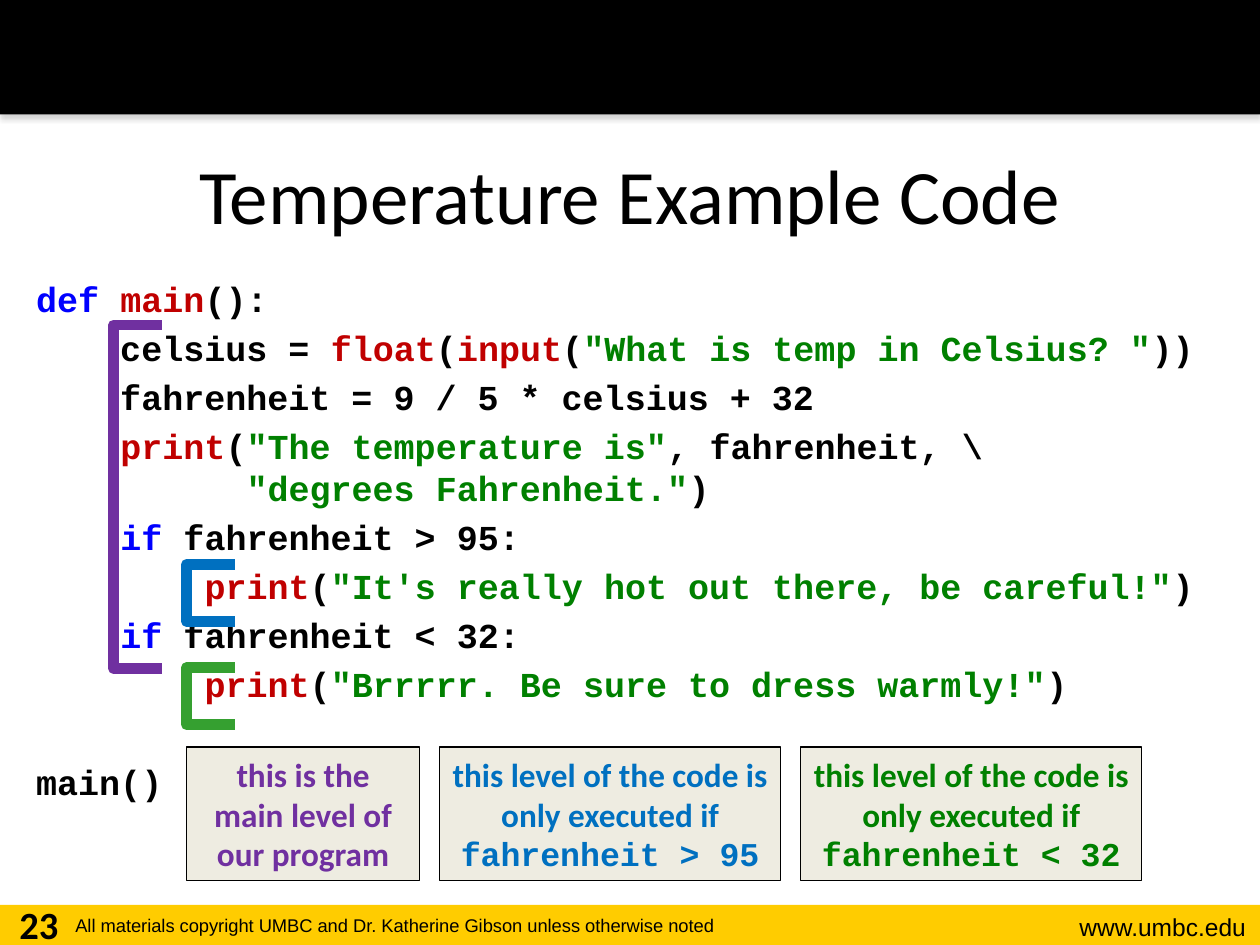
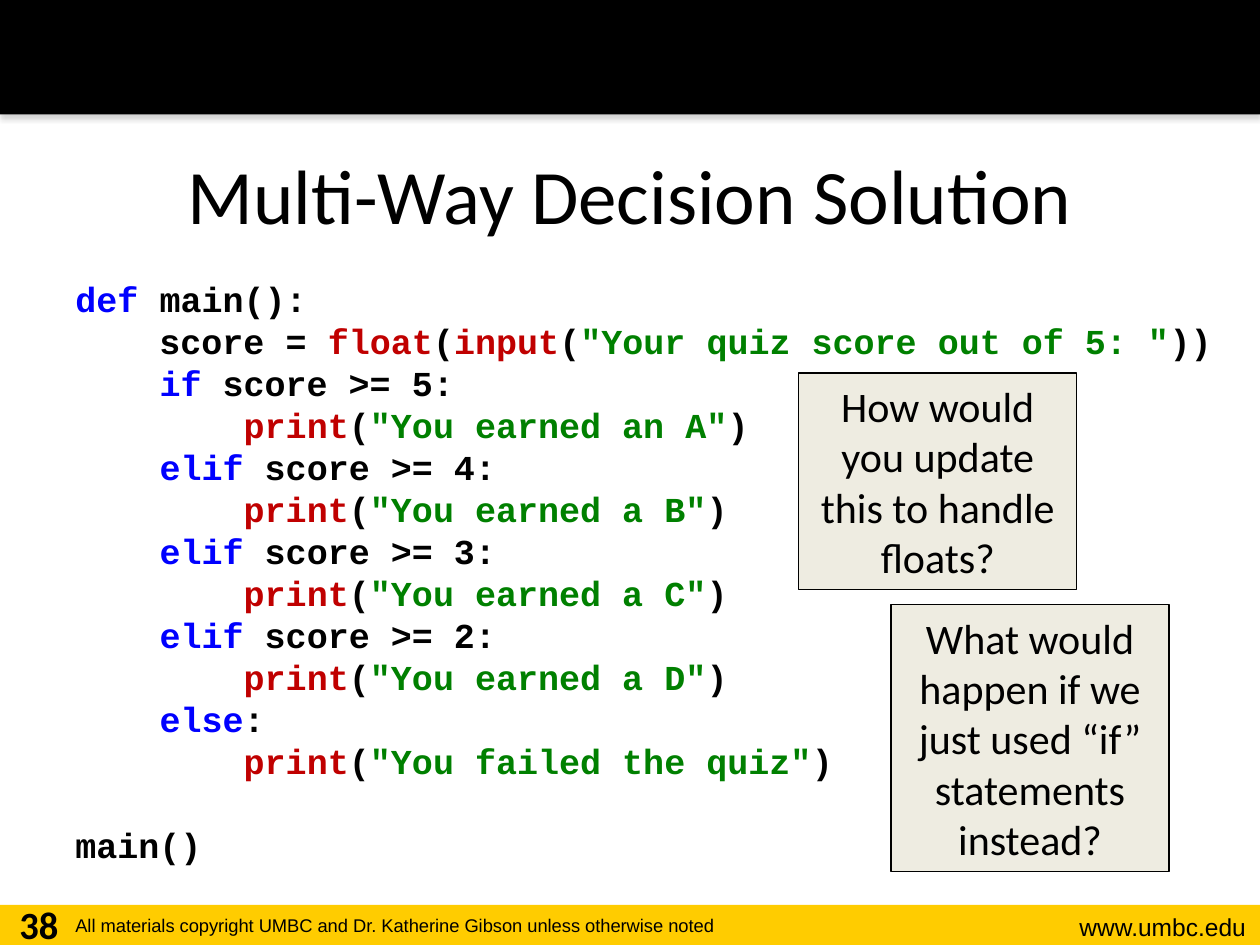
from lxml import etree
from pptx import Presentation
from pptx import util as u
from pptx.dml.color import RGBColor
from pptx.enum import shapes, text
from pptx.oxml import ns

Cm, Pt = u.Cm, u.Pt
COLORS = {
    "black": "000000", "gold": "FFCC00", "shadow": "808080", "note": "EEECE1",
    "keyword": "0000FF", "function": "C00000", "string": "008000",
    "main_level": "7030A0", "hot_level": "0070C0", "cold_bracket": "35A030",
}
SANS, HEADING, MONO = "Arial", "Calibri", "Courier New"
CODE_SIZE, CODE_LINE = 20, 24
CENTER, RIGHT = text.PP_ALIGN.CENTER, text.PP_ALIGN.RIGHT


def color(name):
    return RGBColor.from_string(COLORS[name])


def keyword(words):
    return words, "keyword"


def function(words):
    return words, "function"


def string(words):
    return words, "string"


def print_call(indent, message):
    return [" " * indent, function("print"), "(", string(f'"{message}"'), ")"]


def input_call(target, prompt):
    return [f"    {target} = ", function("float"), "(", function("input"), "(",
            string(f'"{prompt}"'), "))"]


def set_font(font, name, size, tint="black", bold=False):
    font.name, font.size, font.bold = name, Pt(size), bold
    font.color.rgb = color(tint)


def add_label(slide, box, words, name, size, align=None, bold=False, anchor=None):
    frame = slide.shapes.add_textbox(*map(Cm, box)).text_frame
    frame.word_wrap = True
    frame.vertical_anchor = anchor
    line = frame.paragraphs[0]
    line.text = words
    line.alignment = align
    set_font(line.font, name, size, bold=bold)


def add_band(slide, top, height, fill):
    band = slide.shapes.add_shape(shapes.MSO_SHAPE.RECTANGLE, 0, Cm(top), Cm(25.4), Cm(height))
    band.shadow.inherit = False
    band.fill.solid()
    band.fill.fore_color.rgb = color(fill)
    band.line.fill.background()
    return band


def add_drop_shadow(shape):
    effects = shape._element.spPr.find(ns.qn("a:effectLst"))
    shadow = etree.SubElement(effects, ns.qn("a:outerShdw"), blurRad=str(Pt(3.1)),
                              dist=str(Pt(1.8)), dir="5400000", rotWithShape="0")
    tint = etree.SubElement(shadow, ns.qn("a:srgbClr"), val=COLORS["shadow"])
    etree.SubElement(tint, ns.qn("a:alpha"), val="35000")


def add_course_slide(deck, title, number):
    """Add a slide with the bands, footer and title that all slides share."""
    slide = deck.slides.add_slide(deck.slide_layouts[6])
    add_band(slide, 18.24, 0.81, "gold")
    add_drop_shadow(add_band(slide, 0, 2.31, "black"))
    add_label(slide, (20.32, 18.26, 5.05, 0.86), "www.umbc.edu", SANS, 14, RIGHT)
    add_label(slide, (1.27, 18.31, 16.66, 0.74),
              "All materials copyright UMBC and Dr. Katherine Gibson unless otherwise noted",
              SANS, 10.5)
    add_label(slide, (1.27, 2.31, 22.86, 3.18), title, HEADING, 44, CENTER,
              anchor=text.MSO_ANCHOR.MIDDLE)
    add_label(slide, (0, 18.03, 1.57, 1.02), str(number), HEADING, 22, CENTER, bold=True)
    return slide


def add_code(slide, left, width, lines, gap=0):
    """Write code lines of plain or (text, role) parts, then the call of main()."""
    frame = slide.shapes.add_textbox(Cm(left), Cm(5.46), Cm(width), Cm(11.56)).text_frame
    frame.word_wrap = True
    calls = lines + [["main()"]]
    for index, parts in enumerate(calls):
        line = frame.paragraphs[0] if index == 0 else frame.add_paragraph()
        line.line_spacing = Pt(CODE_LINE)
        if index:
            line.space_before = Pt(gap)
        if parts is calls[-1]:
            line.space_before = Pt(CODE_LINE + 2 * gap)
        set_font(line.font, MONO, CODE_SIZE, bold=True)
        for part in parts:
            if part == "\n":
                line.add_line_break()
                continue
            words, role = part if isinstance(part, tuple) else (part, "black")
            run = line.add_run()
            run.text = words
            run.font.color.rgb = color(role)


def add_bracket(slide, box, tint):
    bracket = slide.shapes.add_shape(shapes.MSO_SHAPE.LEFT_BRACKET, *map(Cm, box))
    bracket.adjustments[0] = 0
    bracket.shadow.inherit = False
    bracket.fill.background()
    bracket.line.color.rgb = color(tint)
    bracket.line.width = Pt(6)


def add_note(slide, box, words, size, tint="black", bold=False, condition=""):
    """Add a framed note; a condition follows its words in the code font."""
    note = slide.shapes.add_shape(shapes.MSO_SHAPE.RECTANGLE, *map(Cm, box))
    note.shadow.inherit = False
    note.fill.solid()
    note.fill.fore_color.rgb = color("note")
    note.line.color.rgb = color("black")
    note.line.width = Pt(0.75)
    note.text_frame.word_wrap = True
    line = note.text_frame.paragraphs[0]
    line.alignment = CENTER
    set_font(line.font, HEADING, size, tint, bold)
    line.add_run().text = words
    if condition:
        code = line.add_run()
        code.text = condition
        code.font.name = MONO


def add_temperature_slide(deck):
    slide = add_course_slide(deck, "Temperature Example Code", 23)
    add_code(slide, 0.48, 24.26, [
        [keyword("def "), function("main"), "():"],
        input_call("celsius", "What is temp in Celsius? "),
        ["    fahrenheit = 9 / 5 * celsius + 32"],
        ["    ", function("print"), "(", string('"The temperature is"'), ", fahrenheit, \\",
         "\n", "          ", string('"degrees Fahrenheit."'), ")"],
        ["    ", keyword("if "), "fahrenheit > 95:"],
        print_call(8, "It's really hot out there, be careful!"),
        ["    ", keyword("if "), "fahrenheit < 32:"],
        print_call(8, "Brrrrr. Be sure to dress warmly!"),
    ], gap=4)

    add_bracket(slide, (2.29, 6.55, 0.97, 6.93), "main_level")
    add_bracket(slide, (3.76, 11.38, 0.97, 1.15), "hot_level")
    add_bracket(slide, (3.76, 13.46, 0.97, 1.15), "cold_bracket")

    executed_if = "this level of the code is only executed if "
    left = 3.76
    for width, words, tint, condition in (
            (4.7, "this is the main level of our program", "main_level", ""),
            (6.88, executed_if, "hot_level", "fahrenheit > 95"),
            (6.88, executed_if, "string", "fahrenheit < 32")):
        add_note(slide, (left, 15.06, width, 2.69), words, 19, tint, True, condition)
        left += width + 0.4


def add_decision_slide(deck):
    slide = add_course_slide(deck, "Multi-Way Decision Solution", 38)
    lines = [[keyword("def "), "main():"],
             input_call("score", "Your quiz score out of 5: ")]
    for branch, score, grade in (("if", 5, "an A"), ("elif", 4, "a B"),
                                 ("elif", 3, "a C"), ("elif", 2, "a D")):
        lines += [["    ", keyword(branch), f" score >= {score}:"],
                  print_call(8, f"You earned {grade}")]
    lines += [["    ", keyword("else"), ":"], print_call(8, "You failed the quiz")]
    add_code(slide, 1.27, 23.55, lines)
    add_note(slide, (16.1, 7.52, 5.61, 4.37), "How would you update this to handle floats?", 24)
    add_note(slide, (17.96, 12.19, 5.61, 5.38),
             "What would happen if we just used “if” statements instead?", 24)


def main():
    deck = Presentation()
    deck.slide_width, deck.slide_height = Cm(25.4), Cm(19.05)
    add_temperature_slide(deck)
    add_decision_slide(deck)
    deck.save("out.pptx")


if __name__ == "__main__":
    main()
